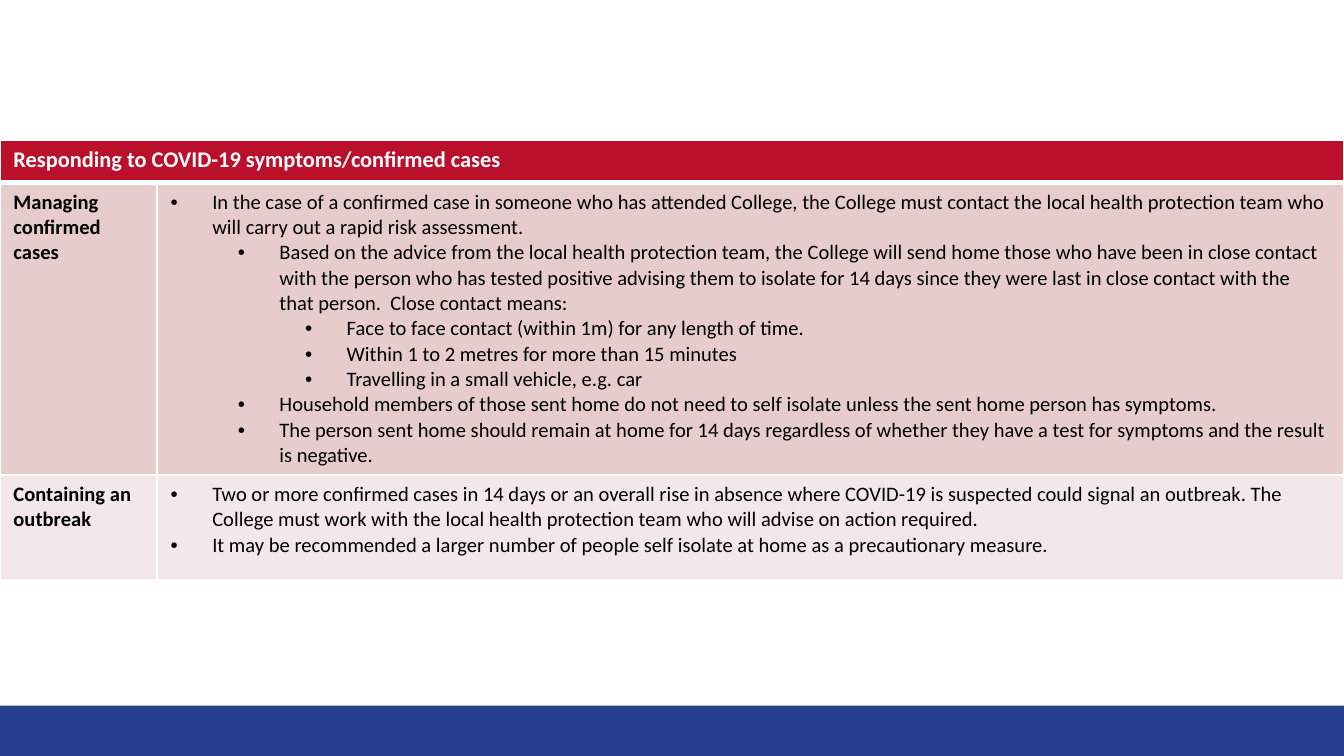
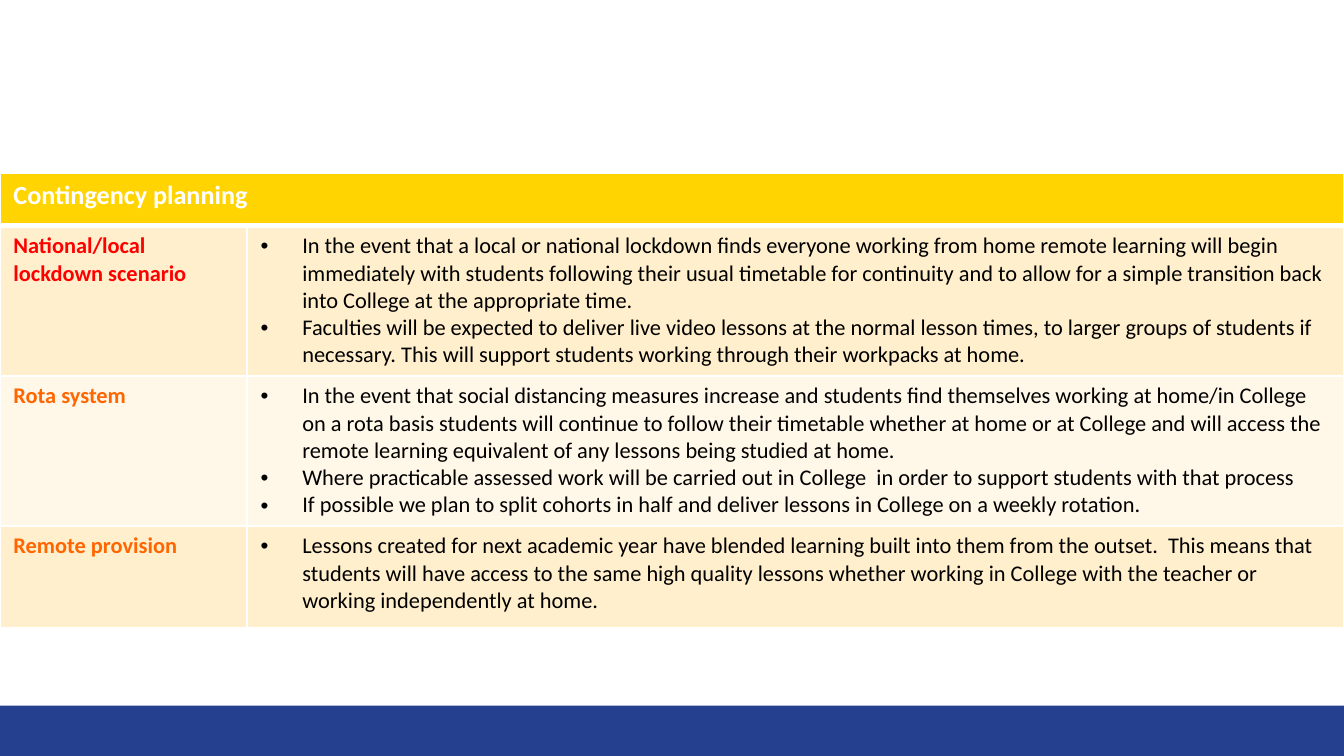
from dataclasses import dataclass

from lxml import etree
from pptx import Presentation
from pptx.dml.color import RGBColor
from pptx.enum.shapes import MSO_SHAPE
from pptx.oxml.ns import qn
from pptx.util import Inches, Pt

RECT = MSO_SHAPE.RECTANGLE


@dataclass(frozen=True)
class Theme:
    """Colours, font and line widths shared by the slides."""

    font: str = "Calibri"
    white: str = "FFFFFF"
    black: str = "000000"
    blue: str = "25408F"
    red: str = "FF0000"
    orange: str = "FF6600"
    thin: int = 1
    thick: int = 3
    hang: float = 0.31
    step: float = 0.5


@dataclass(frozen=True)
class Look:
    """Colours and type sizes of one table."""

    head: str
    odd: str
    even: str
    title: int
    body: int


THEME = Theme()
CRIMSON = Look("BA102C", "E7CCCD", "F3E7E8", 12, 11)
GOLD = Look("FFD400", "FFEFCC", "FFF7E7", 14, 12)

CASES = [
    ("Managing confirmed cases", THEME.black, [
        (0, "In the case of a confirmed case in someone who has attended College, the College must "
            "contact the local health protection team who will carry out a rapid risk assessment."),
        (1, "Based on the advice from the local health protection team, the College will send home "
            "those who have been in close contact with the person who has tested positive advising "
            "them to isolate for 14 days since they were last in close contact with the that "
            "person.  Close contact means:"),
        (2, "Face to face contact (within 1m) for any length of time."),
        (2, "Within 1 to 2 metres for more than 15 minutes"),
        (2, "Travelling in a small vehicle, e.g. car"),
        (1, "Household members of those sent home do not need to self isolate unless the sent home "
            "person has symptoms."),
        (1, "The person sent home should remain at home for 14 days regardless of whether they have "
            "a test for symptoms and the result is negative."),
    ]),
    ("Containing an outbreak", THEME.black, [
        (0, "Two or more confirmed cases in 14 days or an overall rise in absence where COVID-19 is "
            "suspected could signal an outbreak. The College must work with the local health "
            "protection team who will advise on action required."),
        (0, "It may be recommended a larger number of people self isolate at home as a "
            "precautionary measure."),
    ]),
]

PLANS = [
    ("National/local lockdown scenario", THEME.red, [
        (0, "In the event that a local or national lockdown finds everyone working from home remote "
            "learning will begin immediately with students following their usual timetable for "
            "continuity and to allow for a simple transition back into College at the appropriate "
            "time."),
        (0, "Faculties will be expected to deliver live video lessons at the normal lesson times, "
            "to larger groups of students if necessary. This will support students working through "
            "their workpacks at home."),
    ]),
    ("Rota system", THEME.orange, [
        (0, "In the event that social distancing measures increase and students find themselves "
            "working at home/in College on a rota basis students will continue to follow their "
            "timetable whether at home or at College and will access the remote learning "
            "equivalent of any lessons being studied at home."),
        (0, "Where practicable assessed work will be carried out in College  in order to support "
            "students with that process"),
        (0, "If possible we plan to split cohorts in half and deliver lessons in College on a "
            "weekly rotation."),
    ]),
    ("Remote provision", THEME.orange, [
        (0, "Lessons created for next academic year have blended learning built into them from the "
            "outset.  This means that students will have access to the same high quality lessons "
            "whether working in College with the teacher or working independently at home."),
    ]),
]


def add_run(para, text, size, color, bold=False):
    """Add one styled run to a paragraph."""
    run = para.add_run()
    run.text = text
    font = run.font
    font.name, font.size, font.bold = THEME.font, Pt(size), bold
    font.color.rgb = RGBColor.from_string(color)


def add_mark(para, level):
    """Give a paragraph a hanging bullet at the given level."""
    para.level = level
    props = para._p.get_or_add_pPr()
    props.set("marL", str(Inches(THEME.hang + THEME.step * level)))
    props.set("indent", str(-Inches(THEME.hang)))
    etree.SubElement(props, qn("a:buFont")).set("typeface", "Arial")
    etree.SubElement(props, qn("a:buChar")).set("char", "•")


def paint(cell, color, top, base):
    """Fill a cell and draw its white borders."""
    cell.fill.solid()
    cell.fill.fore_color.rgb = RGBColor.from_string(color)
    props = cell._tc.get_or_add_tcPr()
    sides = {"L": THEME.thin, "R": THEME.thin, "T": top, "B": base}
    for spot, (side, width) in enumerate(sides.items()):
        line = etree.Element(qn(f"a:ln{side}"), w=str(Pt(width)))
        fill = etree.SubElement(line, qn("a:solidFill"))
        etree.SubElement(fill, qn("a:srgbClr")).set("val", THEME.white)
        props.insert(spot, line)


def add_points(cell, points, size):
    """Write a list of bullets into a cell."""
    frame = cell.text_frame
    for spot, (level, text) in enumerate(points):
        para = frame.add_paragraph() if spot else frame.paragraphs[0]
        add_mark(para, level)
        add_run(para, text, size, THEME.black)


def add_grid(slide, box, cols, rows, look, title, items):
    """Place a titled table of topics and bullets in a box."""
    frame = slide.shapes.add_table(len(rows), len(cols), *map(Inches, box))
    grid = frame.table
    for col, width in zip(grid.columns, cols):
        col.width = Inches(width)
    for row, height in zip(grid.rows, rows):
        row.height = Inches(height)
    frame.height = Inches(box[3])

    for cell in grid.rows[0].cells:
        paint(cell, look.head, THEME.thin, THEME.thick)
    head = grid.cell(0, 0)
    head.merge(grid.cell(0, 1))
    add_run(head.text_frame.paragraphs[0], title, look.title, THEME.white, True)

    for spot, (topic, color, points) in enumerate(items, 1):
        name, text = grid.cell(spot, 0), grid.cell(spot, 1)
        for cell in (name, text):
            paint(cell, look.odd if spot % 2 else look.even,
                  THEME.thick if spot == 1 else THEME.thin, THEME.thin)
        add_run(name.text_frame.paragraphs[0], topic, look.body, color, True)
        add_points(text, points, look.body)


def add_band(slide, box):
    """Draw the blue footer band in a box."""
    band = slide.shapes.add_shape(RECT, *map(Inches, box))
    band.shadow.inherit = False
    band.fill.solid()
    band.fill.fore_color.rgb = RGBColor.from_string(THEME.blue)
    band.line.fill.background()


def add_page(deck, *grid):
    """Add a slide with the footer band and one table."""
    slide = deck.slides.add_slide(deck.slide_layouts[6])
    add_band(slide, (0, 5.25, 10, 0.4))
    add_grid(slide, *grid)


def main():
    """Build the deck and save it."""
    deck = Presentation()
    deck.slide_width = Inches(10)
    deck.slide_height = Inches(10) * 9 // 16
    add_page(deck, (0, 1.04, 10, 3.21), (1.17, 8.83), (0.32, 0.52, 0.78), CRIMSON,
             "Responding to COVID-19 symptoms/confirmed cases", CASES)
    add_page(deck, (0, 1.29, 10, 3.56), (1.84, 8.16), (0.39, 0.59, 0.82, 0.76), GOLD,
             "Contingency planning", PLANS)
    deck.save("out.pptx")


if __name__ == "__main__":
    main()
